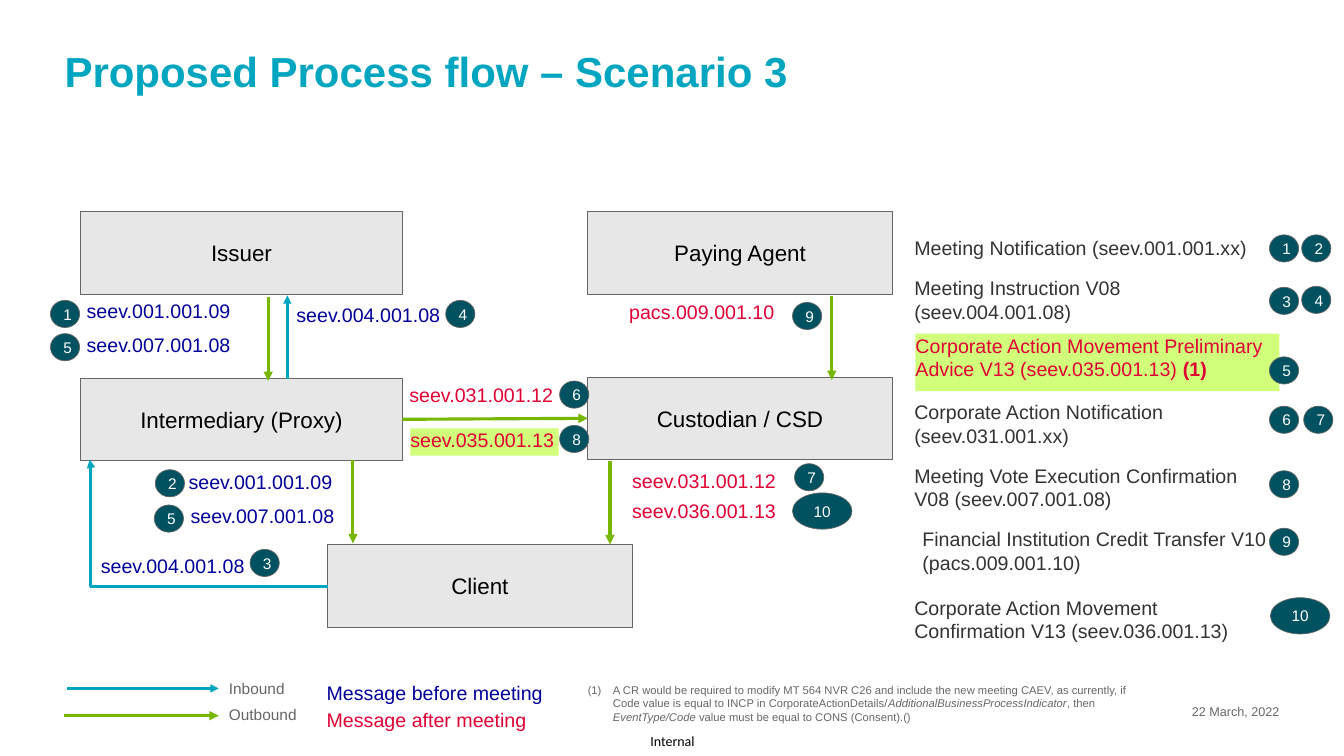
import collections
import pptx
import pptx.util
import pptx.dml.color
import pptx.enum.shapes
import pptx.enum.text
import pptx.oxml.ns
import lxml.etree

PX = 9144
SHAPE = pptx.enum.shapes.MSO_SHAPE
CONNECTOR = pptx.enum.shapes.MSO_CONNECTOR
ANCHOR = pptx.enum.text.MSO_ANCHOR
ALIGN = pptx.enum.text.PP_ALIGN
FIT = pptx.enum.text.MSO_AUTO_SIZE


class Theme:
    font, footer_font = "Arial", "Calibri"
    cyan, green, teal = "00A5C0", "77B700", "005260"
    navy, red, lime = "000099", "E00034", "D1FF7C"
    panel, grey, ink, black, white = "E7E7E7", "666666", "333333", "000000", "FFFFFF"
    title, actor, message, badge = 30, 16, 14, 11
    label, footer, date, note = 11, 10, 9, 8
    outline, inbound, outbound = 0.5, 2, 2.25


class Box(collections.namedtuple("Box", "left top width height")):
    def inner(self, left, top, width, height):
        return Box(self.left + left, self.top + top, width, height)

    def emu(self):
        return [value * PX for value in self]


def rgb(color):
    return pptx.dml.color.RGBColor.from_string(color)


def add_span(para, text, size, color, font=Theme.font, bold=False, italic=False):
    span = para.add_run()
    span.text = text
    span.font.name = font
    span.font.size = pptx.util.Pt(size)
    span.font.bold, span.font.italic = bold, italic
    span.font.color.rgb = rgb(color)


def set_insets(frame, side, end):
    frame.margin_left = frame.margin_right = side * PX
    frame.margin_top = frame.margin_bottom = end * PX


def add_text(page, box, text, size, color, wrap=False, insets=(0, 0), font=Theme.font):
    frame = page.shapes.add_textbox(*box.emu()).text_frame
    frame.word_wrap = wrap
    set_insets(frame, *insets)
    para = frame.paragraphs[0]
    if text:
        add_span(para, text, size, color, font)
    return frame


def add_panel(page, box, kind, fill, outline=None):
    shape = page.shapes.add_shape(kind, *box.emu())
    shape.shadow.inherit = False
    shape.fill.solid()
    shape.fill.fore_color.rgb = rgb(fill)
    if outline:
        shape.line.color.rgb = rgb(outline)
        shape.line.width = pptx.util.Pt(Theme.outline)
    else:
        shape.line.fill.background()
    return shape.text_frame


def add_node(page, box, kind, fill, text, size, color):
    frame = add_panel(page, box, kind, fill, Theme.grey)
    frame.vertical_anchor = ANCHOR.MIDDLE
    set_insets(frame, 12, 12)
    frame.paragraphs[0].alignment = ALIGN.CENTER
    add_span(frame.paragraphs[0], text, size, color)


def add_badge(page, box, number, left, top):
    width, height = (59, 36) if number > 9 else (29, 27)
    add_node(page, box.inner(left, top, width, height), SHAPE.OVAL,
             Theme.teal, str(number), Theme.badge, Theme.white)


def add_highlight(page, box, text, wrap, note=None):
    frame = add_panel(page, box, SHAPE.RECTANGLE, Theme.lime)
    frame.word_wrap = wrap
    frame.vertical_anchor = ANCHOR.TOP
    set_insets(frame, 0, 0)
    para = frame.paragraphs[0]
    para.alignment = ALIGN.LEFT
    add_span(para, text, Theme.message, Theme.red)
    if note:
        add_span(para, note, Theme.message, Theme.red, bold=True)


def add_arrow(page, box, start, end, color, width, kind=CONNECTOR.STRAIGHT):
    points = [(origin + offset) * PX for point in (start, end)
              for origin, offset in zip(box[:2], point)]
    arrow = page.shapes.add_connector(kind, *points)
    arrow.line.color.rgb = rgb(color)
    arrow.line.width = pptx.util.Pt(width)
    qn = pptx.oxml.ns.qn
    properties = arrow._element.spPr
    lxml.etree.SubElement(properties.find(qn("a:ln")), qn("a:tailEnd"), type="triangle")
    lxml.etree.SubElement(properties, qn("a:effectLst"))
    if kind == CONNECTOR.ELBOW:
        guides = properties.find(qn("a:prstGeom")).get_or_add_avLst()
        lxml.etree.SubElement(guides, qn("a:gd"), name="adj1", fmla="val 99500")


def build_title(page, box):
    title = page.shapes.title
    title.left, title.top, title.width, title.height = box.emu()
    frame = title.text_frame
    frame.auto_size = FIT.NONE
    frame.vertical_anchor = ANCHOR.TOP
    set_insets(frame, 0, 0)
    para = frame.paragraphs[0]
    para.alignment = ALIGN.LEFT
    para.line_spacing = 1.1
    add_span(para, "Proposed Process flow – Scenario 3", Theme.title, Theme.cyan, bold=True)


def build_flow(page, box):
    actors = [("Issuer", 30, 0, 319), ("Intermediary (Proxy)", 30, 165, 319),
              ("Paying Agent", 533, 0, 302), ("Custodian / CSD", 533, 164, 302),
              ("Client", 275, 330, 302)]
    for name, left, top, width in actors:
        add_node(page, box.inner(left, top, width, 82), SHAPE.RECTANGLE,
                 Theme.panel, name, Theme.actor, Theme.black)

    for left, top in [(216, 85), (300, 246), (775, 84), (555, 247)]:
        add_arrow(page, box, (left, top), (left, top + 83), Theme.green, Theme.outbound)
    add_arrow(page, box, (349, 206), (533, 205), Theme.green, Theme.outbound)
    add_arrow(page, box, (235, 166), (235, 83), Theme.cyan, 1.75)
    add_arrow(page, box, (275, 372), (39, 246), Theme.cyan, Theme.inbound, CONNECTOR.ELBOW)

    messages = {
        Theme.navy: [("seev.001.001.09", 36, 87), ("seev.007.001.08", 36, 120),
                     ("seev.004.001.08", 244, 90), ("seev.001.001.09", 137, 256),
                     ("seev.007.001.08", 139, 290), ("seev.004.001.08", 50, 339)],
        Theme.red: [("seev.031.001.12", 356, 170), ("seev.031.001.12", 577, 255),
                    ("seev.036.001.13", 577, 285), ("pacs.009.001.10", 574, 88)],
    }
    for color, labels in messages.items():
        for text, left, top in labels:
            add_text(page, box.inner(left, top, 171, 28), text, Theme.message, color)
    add_highlight(page, box.inner(357, 215, 147, 27), "seev.035.001.13", False)

    badges = [(1, 0, 88), (5, 0, 121), (4, 392, 88), (2, 104, 256), (5, 103, 291),
              (3, 198, 335), (6, 505, 168), (8, 505, 212), (9, 736, 90),
              (7, 738, 250), (10, 736, 279)]
    for badge in badges:
        add_badge(page, box, *badge)


def build_message_list(page, box):
    rows = [
        ("Meeting Notification (seev.001.001.xx)", 0, 0, 373, 34, [(1, 362, 4), (2, 394, 4)]),
        ("Meeting Instruction V08 (seev.004.001.08)", 0, 40, 371, 57,
         [(3, 362, 56), (4, 394, 55)]),
        ("Corporate Action Notification (seev.031.001.xx)", 0, 163, 377, 57,
         [(6, 362, 174), (7, 396, 174)]),
        ("Meeting Vote Execution Confirmation V08 (seev.007.001.08)", 0, 226, 371, 57,
         [(8, 362, 238)]),
        ("Financial Institution Credit Transfer V10 (pacs.009.001.10)", 8, 289, 368, 57,
         [(9, 362, 295)]),
        ("Corporate Action Movement Confirmation V13 (seev.036.001.13)", 0, 357, 358, 57,
         [(10, 363, 364)]),
    ]
    for text, left, top, width, height, badges in rows:
        frame = add_text(page, box.inner(left, top, width, height), text, Theme.message,
                         Theme.ink, True, (10, 5))
        frame.auto_size = FIT.SHAPE_TO_FIT_TEXT
        for badge in badges:
            add_badge(page, box, *badge)
    add_highlight(page, box.inner(11, 102, 361, 57),
                  "Corporate Action Movement Preliminary Advice V13 (seev.035.001.13)",
                  True, " (1)")
    add_badge(page, box, 5, 362, 125)


def build_key(page, box):
    rows = [("Inbound", Theme.cyan, Theme.inbound, 3, 9, "Message before meeting", Theme.navy),
            ("Outbound", Theme.green, Theme.outbound, 0, 36, "Message after meeting", Theme.red)]
    for index, (name, color, width, left, line, message, ink) in enumerate(rows):
        top = 26 * index
        add_arrow(page, box, (left, line), (154, line), color, width)
        frame = add_text(page, box.inner(164, top, 90, 33), name, Theme.label, Theme.grey)
        frame.paragraphs[0].space_after = pptx.util.Pt(6)
        add_text(page, box.inner(261, top + 2, 240, 37), message, Theme.message, ink)


def build_footnote(page, box):
    frame = add_text(page, box, "", Theme.note, Theme.grey, True)
    frame.auto_size = FIT.SHAPE_TO_FIT_TEXT
    para = frame.paragraphs[0]
    properties = para._p.get_or_add_pPr()
    properties.set("marL", str(25 * PX))
    properties.set("indent", str(-25 * PX))
    lxml.etree.SubElement(properties, pptx.oxml.ns.qn("a:buAutoNum"), type="arabicParenBoth")
    para.space_after = pptx.util.Pt(6)
    spans = [("A CR would be required to modify MT 564 NVR C26 and include the new meeting CAEV, "
              "as currently, if Code value is equal to INCP in CorporateActionDetails/", False),
             ("AdditionalBusinessProcessIndicator", True), (", then ", False),
             ("EventType/Code ", True), ("value must be equal to CONS (Consent).()", False)]
    for text, italic in spans:
        add_span(para, text, Theme.note, Theme.grey, italic=italic)


def build_footer(page, box):
    label = add_text(page, box.inner(0, 23, 74, 29), "Internal", Theme.footer, Theme.black,
                     True, font=Theme.footer_font)
    label.vertical_anchor = ANCHOR.MIDDLE
    label.paragraphs[0].alignment = ALIGN.CENTER
    date = add_text(page, box.inner(339, 0, 300, 24), "22 March, 2022", Theme.date,
                    Theme.grey, True)
    date.paragraphs[0].alignment = ALIGN.RIGHT


def main():
    deck = pptx.Presentation()
    deck.slide_width, deck.slide_height = 1333 * PX, 750 * PX
    page = deck.slides.add_slide(deck.slide_layouts[5])
    build_title(page, Box(64, 40, 1205, 102))
    build_flow(page, Box(50, 210, 835, 412))
    build_message_list(page, Box(897, 229, 425, 414))
    build_key(page, Box(63, 674, 501, 65))
    build_footnote(page, Box(583, 678, 553, 40))
    build_footer(page, Box(630, 698, 639, 52))
    deck.save("out.pptx")


if __name__ == "__main__":
    main()
